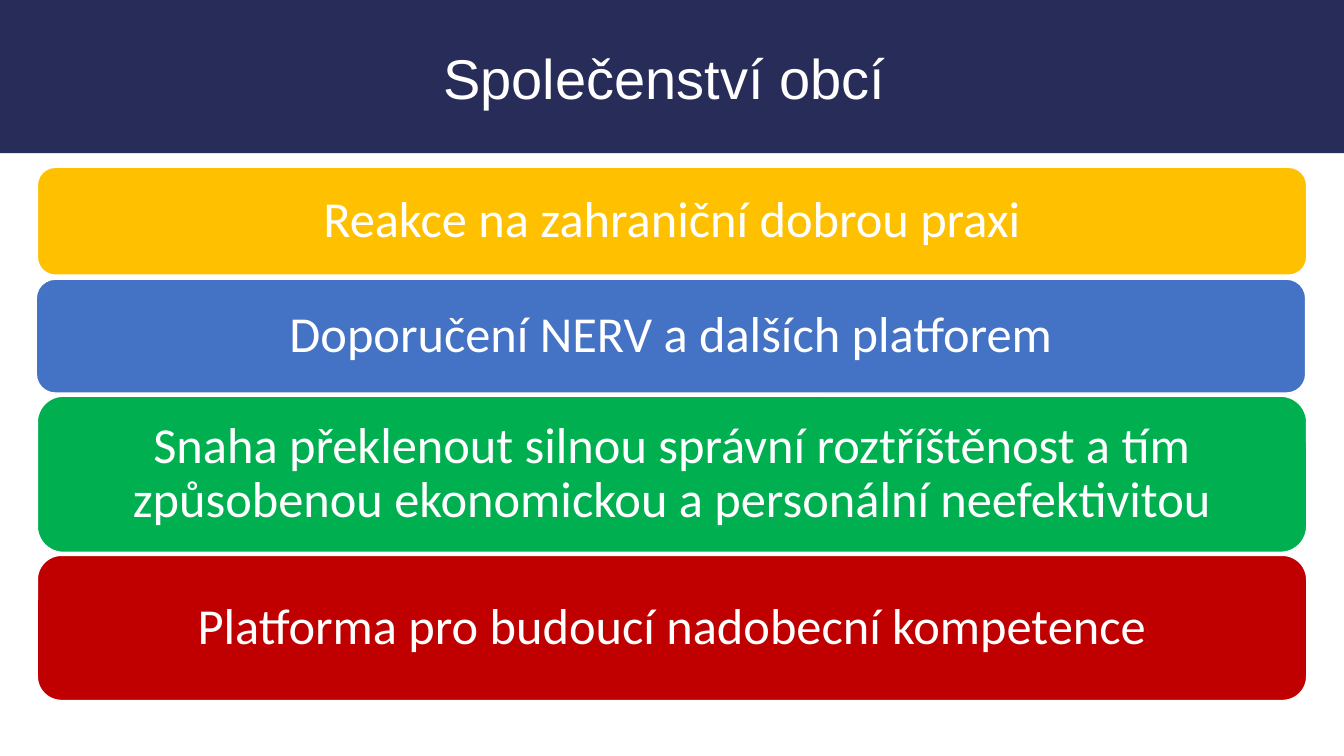
from pptx import Presentation
from pptx.dml.color import RGBColor
from pptx.enum.shapes import MSO_SHAPE
from pptx.enum.text import MSO_ANCHOR, MSO_AUTO_SIZE, PP_ALIGN
from pptx.util import Inches, Pt

COLORS = {
    "navy": "272D58",
    "yellow": "FFC000",
    "blue": "4472C4",
    "green": "00B050",
    "red": "C00000",
    "white": "FFFFFF",
}

REASONS = [
    ("Reakce na zahraniční dobrou praxi", "yellow", 0.37, 1.66, 1.07, 0.21),
    ("Doporučení NERV a dalších platforem", "blue", 0.36, 2.77, 1.13, 0.21),
    ("Snaha překlenout silnou správní roztříštěnost a tím "
     "způsobenou ekonomickou a personální neefektivitou",
     "green", 0.37, 3.93, 1.55, 0.23),
    ("Platforma pro budoucí nadobecní kompetence", "red", 0.37, 5.51, 1.44, 0.22),
]


def color(name):
    """Return the named colour."""
    return RGBColor.from_string(COLORS[name])


def write_text(shape, text, font="Calibri", size=36, line_spacing=0.9, inset=None):
    """Write one centred white paragraph into a shape."""
    frame = shape.text_frame
    frame.word_wrap = True
    frame.auto_size = MSO_AUTO_SIZE.NONE
    frame.vertical_anchor = MSO_ANCHOR.MIDDLE
    if inset is not None:
        frame.margin_left = frame.margin_right = Inches(inset)
        frame.margin_top = frame.margin_bottom = Inches(inset)
    paragraph = frame.paragraphs[0]
    paragraph.alignment = PP_ALIGN.CENTER
    paragraph.line_spacing = line_spacing
    run = paragraph.add_run()
    run.text = text
    run.font.name = font
    run.font.size = Pt(size)
    run.font.color.rgb = color("white")


class SlideBuilder:
    """Hold the style and the current slide."""

    bar_width = 12.59
    corner = 0.1667

    def __init__(self, presentation):
        """Add a title-only slide."""
        self.width = presentation.slide_width
        self.slide = presentation.slides.add_slide(presentation.slide_layouts[5])

    def title(self, text, height):
        """Turn the title placeholder into a full-width band."""
        shape = self.slide.shapes.title
        shape.left, shape.top = Inches(0), Inches(0)
        shape.width, shape.height = self.width, Inches(height)
        shape.fill.solid()
        shape.fill.fore_color.rgb = color("navy")
        write_text(shape, text, font="Arial", size=40, line_spacing=1.0)

    def bar(self, text, fill, left, top, height, inset):
        """Add a rounded bar with a thin white outline."""
        shape = self.slide.shapes.add_shape(
            MSO_SHAPE.ROUNDED_RECTANGLE,
            Inches(left), Inches(top), Inches(self.bar_width), Inches(height))
        shape.adjustments[0] = self.corner
        shape.shadow.inherit = False
        shape.fill.solid()
        shape.fill.fore_color.rgb = color(fill)
        shape.line.color.rgb = color("white")
        shape.line.width = Pt(1)
        write_text(shape, text, inset=inset)


def main():
    """Build and save the presentation."""
    presentation = Presentation()
    presentation.slide_width = Inches(13.33)
    presentation.slide_height = Inches(7.5)
    builder = SlideBuilder(presentation)
    builder.title("Společenství obcí ", height=1.52)
    for reason in REASONS:
        builder.bar(*reason)
    presentation.save("out.pptx")


if __name__ == "__main__":
    main()
